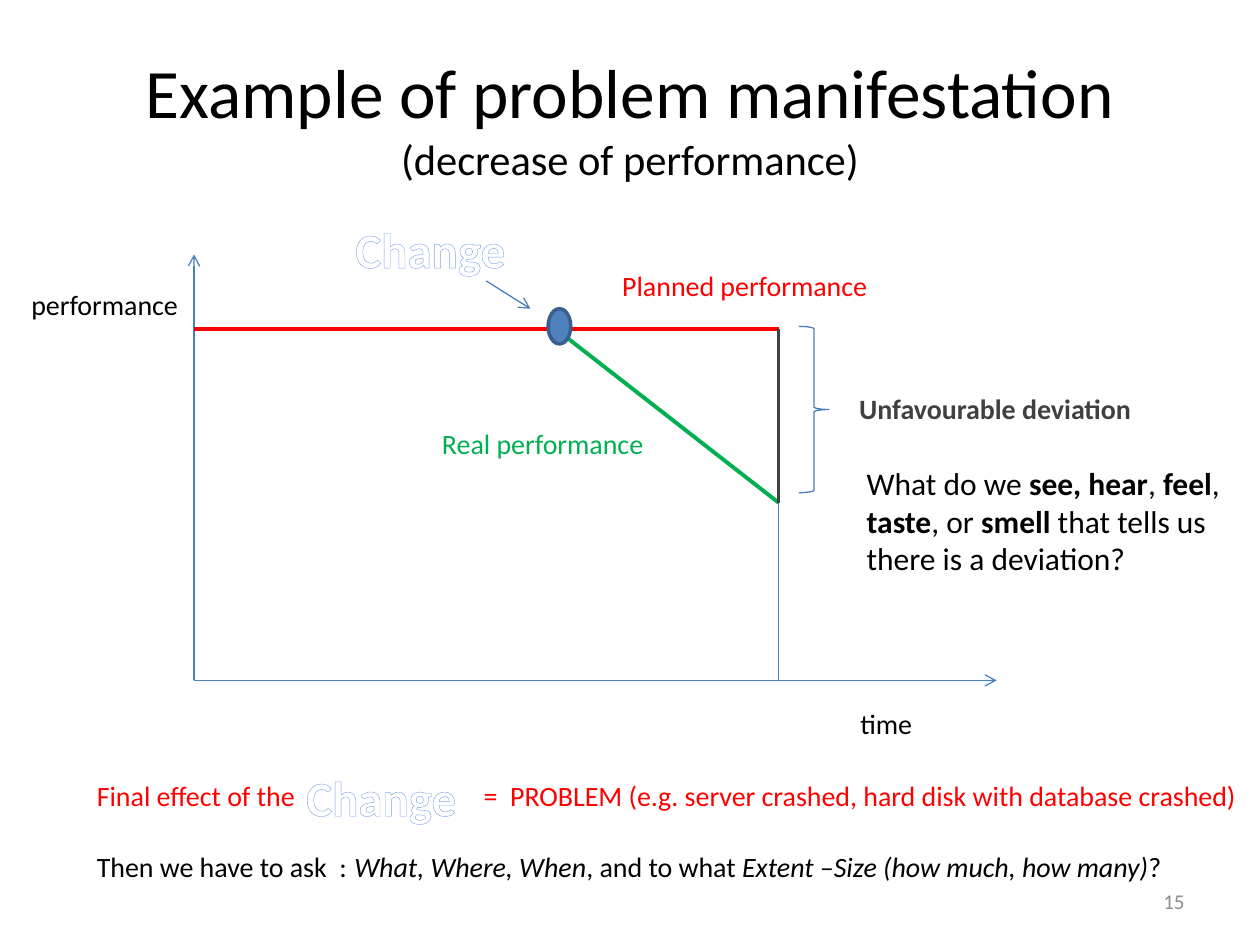
from lxml.etree import SubElement
from pptx import Presentation
from pptx.dml.color import RGBColor
from pptx.enum.shapes import MSO_CONNECTOR, MSO_SHAPE
from pptx.enum.text import MSO_ANCHOR, PP_ALIGN
from pptx.oxml import parse_xml
from pptx.oxml.ns import nsdecls, qn
from pptx.util import Inches, Pt

COLUMNS, ROWS = 100, 75
CELL = Inches(0.1)
FONT = "Calibri"

BLACK = RGBColor(0x00, 0x00, 0x00)
WHITE = RGBColor(0xFF, 0xFF, 0xFF)
RED = RGBColor(0xFF, 0x00, 0x00)
GREEN = RGBColor(0x00, 0xB0, 0x50)
DARK = RGBColor(0x40, 0x40, 0x40)
GREY = RGBColor(0x8C, 0x8C, 0x8C)
BLUE = RGBColor(0x4F, 0x81, 0xBD)
LINE_BLUE = RGBColor(0x4B, 0x7E, 0xBC)
EDGE_BLUE = RGBColor(0x3A, 0x5F, 0x8C)
GLOW_BLUE = RGBColor(0x7E, 0xA6, 0xEA)

START, END = 15.4, 61.8
PLANNED, REAL, BASE = 26.1, 39.9, 54


def grid(*cells):
    return [round(cell * CELL) for cell in cells]


def add_text_box(slide, box, wrap=False, anchor=MSO_ANCHOR.TOP):
    frame = slide.shapes.add_textbox(*grid(*box)).text_frame
    frame.word_wrap = wrap
    frame.vertical_anchor = anchor
    return frame


def add_run(paragraph, text, size=16, color=BLACK, bold=False, italic=False):
    run = paragraph.add_run()
    run.text = text
    font = run.font
    font.name, font.size, font.bold, font.italic = FONT, Pt(size), bold, italic
    font.color.rgb = color
    return run


def add_label(slide, box, text, color=BLACK):
    frame = add_text_box(slide, box)
    add_run(frame.paragraphs[0], text, color=color)


def add_outlined_word(slide, left, top):
    paragraph = add_text_box(slide, (left, top, 14.1, 5.7)).paragraphs[0]
    paragraph.alignment = PP_ALIGN.CENTER
    run = add_run(paragraph, "Change", 28, WHITE, bold=True)
    outline = parse_xml(
        f'<a:ln {nsdecls("a")} w="{Pt(2.48)}"><a:solidFill>'
        f'<a:srgbClr val="{GLOW_BLUE}"/></a:solidFill></a:ln>'
    )
    run.font._element.insert(0, outline)


def add_line(slide, start, end, color=LINE_BLUE, width=0.75, arrow=False):
    connector = slide.shapes.add_connector(
        MSO_CONNECTOR.STRAIGHT, *grid(*start, *end))
    connector.line.color.rgb = color
    connector.line.width = Pt(width)
    if arrow:
        SubElement(connector.line._get_or_add_ln(), qn("a:tailEnd"), type="arrow")
    SubElement(connector._element.spPr, qn("a:effectLst"))


def add_figure(slide, kind, box, line_color, width, fill=None):
    shape = slide.shapes.add_shape(kind, *grid(*box))
    shape.shadow.inherit = False
    if fill is None:
        shape.fill.background()
    else:
        shape.fill.solid()
        shape.fill.fore_color.rgb = fill
    shape.line.color.rgb = line_color
    shape.line.width = Pt(width)


def add_title(slide):
    frame = add_text_box(slide, (5, 3, 90, 12.5), True, MSO_ANCHOR.MIDDLE)
    paragraph = frame.paragraphs[0]
    paragraph.alignment = PP_ALIGN.CENTER
    add_run(paragraph, "Example of problem manifestation", 39.6)
    paragraph.add_line_break()
    add_run(paragraph, "(decrease of performance)", 24.3)


def add_chart_lines(slide):
    origin = (START, BASE)
    add_line(slide, origin, (START, 20.2), arrow=True)
    add_line(slide, origin, (79.1, BASE), arrow=True)
    add_line(slide, (START, PLANNED), (END, PLANNED), RED, 2.25)
    add_line(slide, (44.1, PLANNED), (END, REAL), GREEN, 2.25)
    add_line(slide, (END, PLANNED), (END, REAL), DARK, 2)
    add_line(slide, (END, REAL), (END, BASE))
    add_line(slide, (38.6, 22.3), (42.1, 24.5), arrow=True)
    add_figure(slide, MSO_SHAPE.OVAL, (43.5, 24.5, 1.8, 2.8), EDGE_BLUE, 2, BLUE)
    add_figure(slide, MSO_SHAPE.RIGHT_BRACE, (63.4, 25.9, 2.4, 13.2), LINE_BLUE, 0.75)


def add_deviation(slide):
    frame = add_text_box(slide, (67.2, 30.6, 30.8, 21.2))
    add_run(frame.paragraphs[0], "Unfavourable deviation", color=DARK, bold=True)
    question = [
        [("What do we ", False), ("see, hear", True), (", ", False),
         ("feel", True), (",", False)],
        [("taste", True), (", or ", False), ("smell", True),
         (" that tells us", False)],
        [("there is a deviation?", False)],
    ]
    for index, line in enumerate(question):
        paragraph = frame.add_paragraph()
        paragraph._p.get_or_add_pPr().set("marL", str(Inches(0.06)))
        if index == 0:
            paragraph.space_before = Pt(22)
        for text, bold in line:
            add_run(paragraph, text, 18, bold=bold)


def add_conclusion(slide):
    frame = add_text_box(slide, (6.7, 61.3, 93.3, 12.1), True)
    effect = frame.paragraphs[0]
    tabs = SubElement(effect._p.get_or_add_pPr(), qn("a:tabLst"))
    SubElement(tabs, qn("a:tab"), pos=str(Inches(3.07)), algn="l")
    add_run(effect, "Final effect of the\t=  PROBLEM (e.g. server crashed, "
                    "hard disk with database crashed)", color=RED)
    questions = frame.add_paragraph()
    questions.space_before = Pt(19.5)
    add_run(questions, "Then we have to ask  :")
    add_run(questions, " ", 18)
    for text, italic in [
        ("What, Where, When", True), (", and to what ", False),
        ("Extent –Size (how much, how many)", True), ("?", False),
    ]:
        add_run(questions, text, italic=italic)


def add_page_number(slide):
    frame = add_text_box(slide, (71.7, 69.5, 23.3, 4), True, MSO_ANCHOR.MIDDLE)
    paragraph = frame.paragraphs[0]
    paragraph.alignment = PP_ALIGN.RIGHT
    add_run(paragraph, "15", 12, GREY)


def main():
    presentation = Presentation()
    presentation.slide_width = COLUMNS * CELL
    presentation.slide_height = ROWS * CELL
    slide = presentation.slides.add_slide(presentation.slide_layouts[6])
    add_title(slide)
    add_chart_lines(slide)
    add_label(slide, (1.5, 22.3, 13.8, 3.7), "performance")
    add_label(slide, (67.3, 55.6, 6.2, 3.7), "time")
    add_label(slide, (48.4, 20.8, 21.7, 3.7), "Planned performance", RED)
    add_label(slide, (34.1, 33.4, 18.7, 3.7), "Real performance", GREEN)
    add_deviation(slide)
    add_outlined_word(slide, 27.1, 16.9)
    add_conclusion(slide)
    add_outlined_word(slide, 23.2, 60.4)
    add_page_number(slide)
    presentation.save("out.pptx")


if __name__ == "__main__":
    main()
